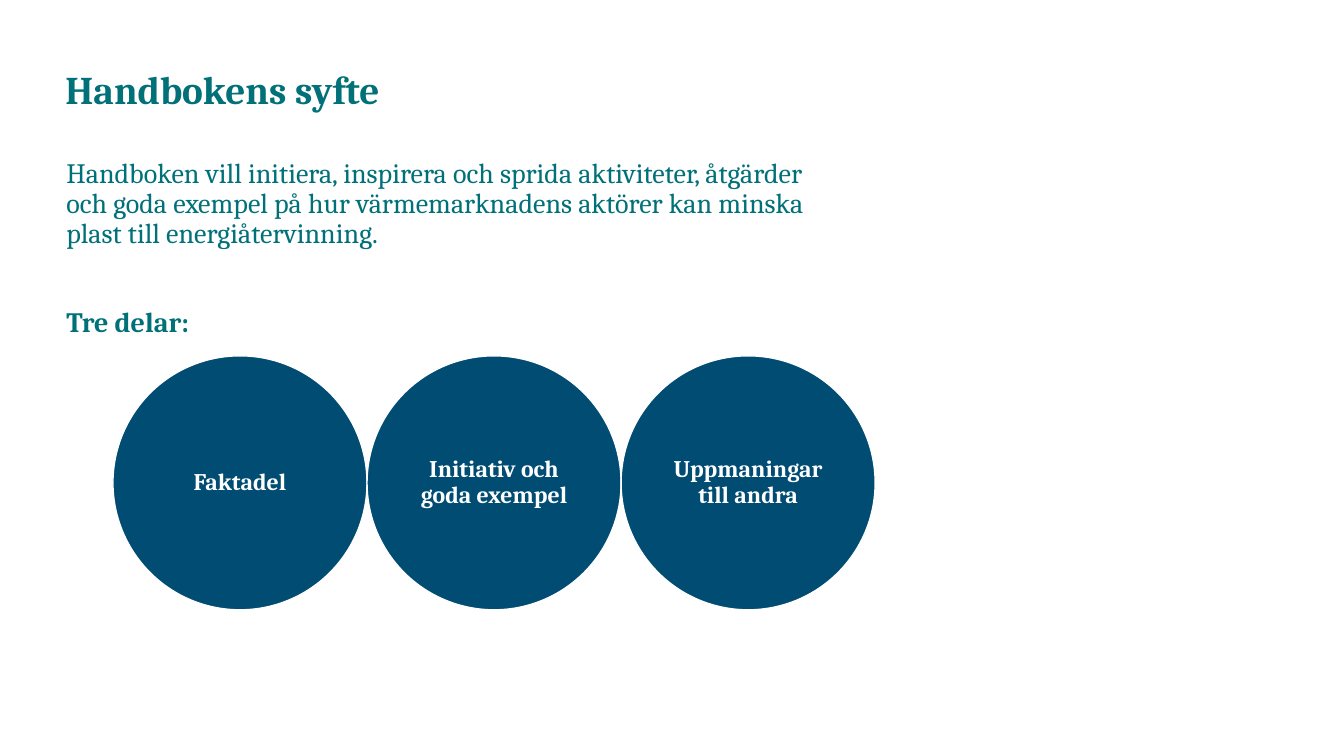
from pptx import Presentation
from pptx.dml.color import RGBColor
from pptx.enum.shapes import MSO_SHAPE
from pptx.enum.text import MSO_ANCHOR, PP_ALIGN
from pptx.util import Inches, Pt

# Content
TITLE = "Handbokens syfte"
PURPOSE = ("Handboken vill initiera, inspirera och sprida aktiviteter, åtgärder "
           "och goda exempel på hur värmemarknadens aktörer kan minska plast "
           "till energiåtervinning.")
PARTS_HEADING = "Tre delar:"
PARTS = ["Faktadel", "Initiativ och goda exempel", "Uppmaningar till andra"]

# Style
FONT = "Cambria"
TEAL = RGBColor(0x00, 0x70, 0x79)
NAVY = RGBColor(0x00, 0x4C, 0x73)
WHITE = RGBColor(0xFF, 0xFF, 0xFF)

# Layout in inches
TITLE_BOX = (0.55, 0.56, 7.67, 0.7)
BODY_BOX = (0.56, 1.53, 7.66, 4.66)
CIRCLE_LEFT, CIRCLE_TOP, DIAMETER = 1.12, 3.53, 2.52


def add_text(p, text, size, color, bold=False):
    p.line_spacing = 0.9
    r = p.add_run()
    r.text = text
    r.font.name = FONT
    r.font.size = Pt(size)
    r.font.bold = bold
    r.font.color.rgb = color


def add_box(s, box, anchor):
    tf = s.shapes.add_textbox(*map(Inches, box)).text_frame
    tf.word_wrap = True
    tf.vertical_anchor = anchor
    return tf


def add_circle(s, column, label):
    left = CIRCLE_LEFT + column * DIAMETER
    sp = s.shapes.add_shape(MSO_SHAPE.OVAL, *map(
        Inches, (left, CIRCLE_TOP, DIAMETER, DIAMETER)))
    sp.shadow.inherit = False
    sp.fill.solid()
    sp.fill.fore_color.rgb = NAVY
    sp.line.color.rgb = WHITE
    sp.line.width = Pt(1)
    tf = sp.text_frame
    tf.word_wrap = True
    tf.vertical_anchor = MSO_ANCHOR.MIDDLE
    tf.margin_left = tf.margin_right = tf.margin_top = tf.margin_bottom = 0
    p = tf.paragraphs[0]
    p.alignment = PP_ALIGN.CENTER
    add_text(p, label, 17, WHITE, bold=True)


def main():
    prs = Presentation()
    prs.slide_width, prs.slide_height = Inches(13.33), Inches(7.5)
    s = prs.slides.add_slide(prs.slide_layouts[6])

    # Title
    tf = add_box(s, TITLE_BOX, MSO_ANCHOR.MIDDLE)
    add_text(tf.paragraphs[0], TITLE, 28, TEAL, bold=True)

    # Purpose and heading for the parts
    tf = add_box(s, BODY_BOX, MSO_ANCHOR.TOP)
    add_text(tf.paragraphs[0], PURPOSE, 20, TEAL)
    p = tf.add_paragraph()
    p.space_before = Pt(42)
    add_text(p, PARTS_HEADING, 20, TEAL, bold=True)

    # Row of touching circles
    for column, label in enumerate(PARTS):
        add_circle(s, column, label)

    prs.save("out.pptx")


if __name__ == "__main__":
    main()
